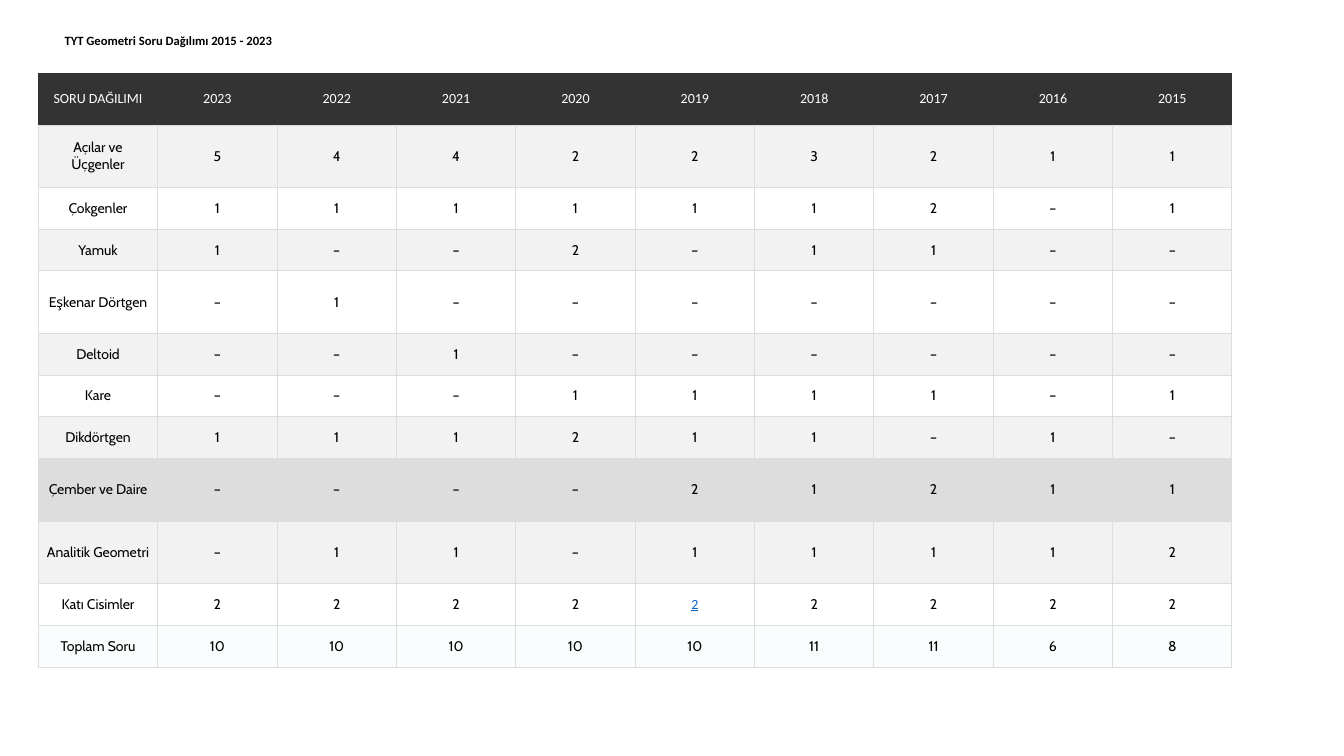
from lxml import etree
from pptx import Presentation
from pptx.dml.color import RGBColor
from pptx.enum.text import MSO_ANCHOR, PP_ALIGN
from pptx.oxml.ns import qn
from pptx.util import Inches, Pt

MIDDLE = MSO_ANCHOR.MIDDLE
CENTER = PP_ALIGN.CENTER
LEFT = PP_ALIGN.LEFT
TITLE_ONLY = 5

BLACK, WHITE, DARK = "000000", "FFFFFF", "333333"
BAND, HIGHLIGHT, TOTAL = "F2F2F2", "DDDDDD", "FAFDFE"
GRID, LINK = "DDDDDD", "0563C1"

TITLE = "TYT Geometri Soru Dağılımı 2015 - 2023"
HEADER = ["SORU DAĞILIMI"] + [str(year) for year in range(2023, 2014, -1)]
TOPICS = [
    ("Açılar ve Üçgenler", "5 4 4 2 2 3 2 1 1", BAND),
    ("Çokgenler", "1 1 1 1 1 1 2 – 1", WHITE),
    ("Yamuk", "1 – – 2 – 1 1 – –", BAND),
    ("Eşkenar Dörtgen", "– 1 – – – – – – –", WHITE),
    ("Deltoid", "– – 1 – – – – – –", BAND),
    ("Kare", "– – – 1 1 1 1 – 1", WHITE),
    ("Dikdörtgen", "1 1 1 2 1 1 – 1 –", BAND),
    ("Çember ve Daire", "– – – – 2 1 2 1 1", HIGHLIGHT),
    ("Analitik Geometri", "– 1 1 – 1 1 1 1 2", BAND),
    ("Katı Cisimler", "2 2 2 2 2 2 2 2 2", WHITE),
    ("Toplam Soru", "10 10 10 10 10 11 11 6 8", TOTAL),
]
TALL_TOPICS = {"Açılar ve Üçgenler", "Eşkenar Dörtgen", "Çember ve Daire", "Analitik Geometri"}
LINKED_CELL = ("Katı Cisimler", HEADER.index("2019"))
HEADER_HEIGHT, TALL_HEIGHT = 0.52, 0.62


def color(value):
    return RGBColor.from_string(value)


def add_span(para, text, size, font, ink, bold=False, underline=False):
    span = para.add_run()
    span.text = text
    span.font.size = Pt(size)
    span.font.name = font
    span.font.bold = bold
    span.font.underline = underline
    span.font.color.rgb = color(ink)


def add_borders(cell, visible_sides):
    properties = cell._tc.get_or_add_tcPr()
    for side in "LRTB":
        line = etree.SubElement(properties, qn(f"a:ln{side}"), w=str(Pt(0.75)))
        if side in visible_sides:
            fill = etree.SubElement(line, qn("a:solidFill"))
            etree.SubElement(fill, qn("a:srgbClr"), val=GRID)
        else:
            etree.SubElement(line, qn("a:noFill"))


def fill_cell(cell, text, background, ink, font, margins, sides="LRTB", underline=False):
    side_margin, edge_margin = margins
    cell.margin_left = cell.margin_right = Inches(side_margin)
    cell.margin_top = cell.margin_bottom = Inches(edge_margin)
    cell.vertical_anchor = MIDDLE
    add_borders(cell, sides)
    cell.fill.solid()
    cell.fill.fore_color.rgb = color(background)
    para = cell.text_frame.paragraphs[0]
    para.alignment = CENTER
    add_span(para, text, 10, font, ink, underline=underline)


def place_title(page, left, top, width, height):
    box = page.shapes.title
    box.left, box.top, box.width, box.height = map(Inches, (left, top, width, height))
    box.fill.solid()
    box.fill.fore_color.rgb = color(WHITE)
    frame = box.text_frame
    frame.word_wrap = True
    frame.vertical_anchor = MIDDLE
    para = frame.paragraphs[0]
    para.alignment = LEFT
    add_span(para, TITLE, 9, "Calibri", BLACK, bold=True)


def place_table(page, left, top, width, height):
    frame = page.shapes.add_table(
        len(TOPICS) + 1, len(HEADER), *map(Inches, (left, top, width, height)))
    table = frame.table
    table.horz_banding = False
    for column in table.columns:
        column.width = Inches(width / len(HEADER))
    short_count = len(TOPICS) - len(TALL_TOPICS)
    short_height = (height - HEADER_HEIGHT - TALL_HEIGHT * len(TALL_TOPICS)) / short_count

    table.rows[0].height = Inches(HEADER_HEIGHT)
    for column, text in enumerate(HEADER):
        fill_cell(table.cell(0, column), text, DARK, WHITE, "Calibri", (0.01, 0.12), sides="B")

    for row, (topic, counts, background) in enumerate(TOPICS, 1):
        table.rows[row].height = Inches(TALL_HEIGHT if topic in TALL_TOPICS else short_height)
        for column, text in enumerate([topic] + counts.split()):
            linked = (topic, column) == LINKED_CELL
            fill_cell(table.cell(row, column), text, background,
                      LINK if linked else BLACK, "Calibri" if linked else "Cabin",
                      (0.08, 0.08), underline=linked)


def main():
    deck = Presentation()
    deck.slide_width, deck.slide_height = Inches(13.33), Inches(7.5)
    page = deck.slides.add_slide(deck.slide_layouts[TITLE_ONLY])
    place_title(page, 0.54, 0.22, 12.79, 0.36)
    place_table(page, 0.38, 0.72, 11.84, 5.9)
    deck.save("out.pptx")


if __name__ == "__main__":
    main()
